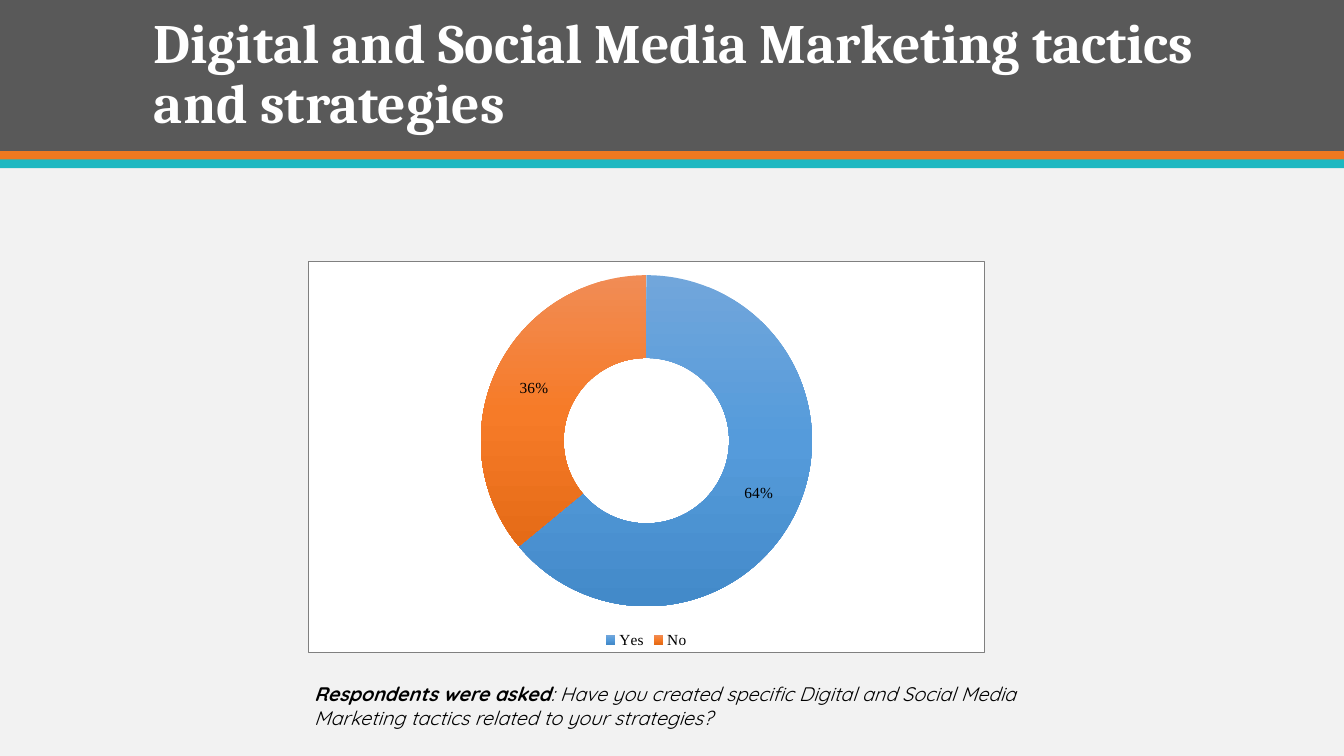
"""Builds a slide with a doughnut chart on digital and social media marketing tactics."""
import copy

import pptx
import pptx.chart.data
import pptx.dml.color
import pptx.enum.chart
import pptx.enum.shapes
import pptx.enum.text
import pptx.oxml
import pptx.util

Cm = pptx.util.Cm
Pt = pptx.util.Pt
RGBColor = pptx.dml.color.RGBColor

BACKGROUND = RGBColor(0xF2, 0xF2, 0xF2)
CHARCOAL = RGBColor(0x59, 0x59, 0x59)
ORANGE = RGBColor(0xEF, 0x79, 0x20)
TEAL = RGBColor(0x1E, 0xB8, 0xC1)
WHITE = RGBColor(0xFF, 0xFF, 0xFF)
BLACK = RGBColor(0, 0, 0)
YES_SHADES = [RGBColor(0x71, 0xA6, 0xDB), RGBColor(0x55, 0x9B, 0xDB), RGBColor(0x43, 0x8A, 0xC9)]
NO_SHADES = [RGBColor(0xF1, 0x8C, 0x55), RGBColor(0xF6, 0x7B, 0x28), RGBColor(0xE5, 0x6B, 0x17)]


def add_text(paragraph, text, *, font, size, color, bold=False, italic=False):
    run = paragraph.add_run()
    run.text = text
    run.font.name = font
    run.font.size = Pt(size)
    run.font.color.rgb = color
    run.font.bold = bold
    run.font.italic = italic


presentation = pptx.Presentation()
presentation.slide_width = Cm(33.87)
presentation.slide_height = Cm(19.05)
slide = presentation.slides.add_slide(presentation.slide_layouts[6])
slide.background.fill.solid()
slide.background.fill.fore_color.rgb = BACKGROUND

for top, height, color in [(0, 3.81, CHARCOAL), (3.81, 0.22, ORANGE), (4.02, 0.22, TEAL)]:
    band = slide.shapes.add_shape(pptx.enum.shapes.MSO_SHAPE.RECTANGLE,
                                  0, Cm(top), presentation.slide_width, Cm(height))
    band.shadow.inherit = False
    band.fill.solid()
    band.fill.fore_color.rgb = color
    band.line.fill.background()

title = slide.shapes.add_textbox(Cm(3.63), Cm(1.37), Cm(28.19), Cm(2.16)).text_frame
title.word_wrap = True
title.vertical_anchor = pptx.enum.text.MSO_ANCHOR.BOTTOM
title.paragraphs[0].line_spacing = 0.9
add_text(title.paragraphs[0], "Digital and Social Media Marketing tactics and strategies",
         font="Cambria", size=39.6, color=WHITE, bold=True)

question = slide.shapes.add_textbox(Cm(7.67), Cm(17.07), Cm(18.52), Cm(1.45)).text_frame
question.word_wrap = True
for text, bold in [
    ("Respondents were asked", True),
    (": Have you created specific Digital and Social Media Marketing tactics "
     "related to your strategies?", False),
]:
    add_text(question.paragraphs[0], text, font="Quicksand", size=14, color=BLACK,
             bold=bold, italic=True)

answers = pptx.chart.data.CategoryChartData(number_format="0%")
answers.categories = ["Yes", "No"]
answers.add_series("Series 1", [0.64, 0.36])
doughnut = slide.shapes.add_chart(pptx.enum.chart.XL_CHART_TYPE.DOUGHNUT,
                                  Cm(7.77), Cm(6.58), Cm(17.04), Cm(9.86), answers).chart
doughnut.has_title = False
doughnut.font.name = "Calibri"
doughnut.font.size = Pt(10)
doughnut.font.color.rgb = BLACK

doughnut.has_legend = True
doughnut.legend.position = pptx.enum.chart.XL_LEGEND_POSITION.BOTTOM
doughnut.legend.include_in_layout = False

ring = doughnut.plots[0]
ring.vary_by_categories = True
ring.has_data_labels = True
ring.data_labels.show_value = True
ring.data_labels.show_percentage = False
ring.data_labels.number_format = "0%"
ring.data_labels.number_format_is_linked = False
for font in (doughnut.legend.font, ring.data_labels.font):
    font.name = "Times New Roman"
    font.size = Pt(11)
    font.color.rgb = BLACK

for index, shades in enumerate([YES_SHADES, NO_SHADES]):
    slice_format = ring.series[0].points[index].format
    slice_format.line.fill.background()
    slice_format.fill.gradient()
    slice_format.fill.gradient_angle = 270
    first_stop = slice_format.fill.gradient_stops[0]._gs
    first_stop.addnext(copy.deepcopy(first_stop))
    for step, (stop, shade) in enumerate(zip(slice_format.fill.gradient_stops, shades)):
        stop.position = step / 2
        stop.color.rgb = shade

chart_frame = pptx.oxml.parse_xml(
    '<c:spPr xmlns:c="http://schemas.openxmlformats.org/drawingml/2006/chart"'
    ' xmlns:a="http://schemas.openxmlformats.org/drawingml/2006/main">'
    '<a:solidFill><a:srgbClr val="FFFFFF"/></a:solidFill>'
    '<a:ln w="3175"><a:solidFill><a:srgbClr val="808080"/></a:solidFill></a:ln>'
    '</c:spPr>')
doughnut._chartSpace.chart.addnext(chart_frame)

presentation.save("out.pptx")
